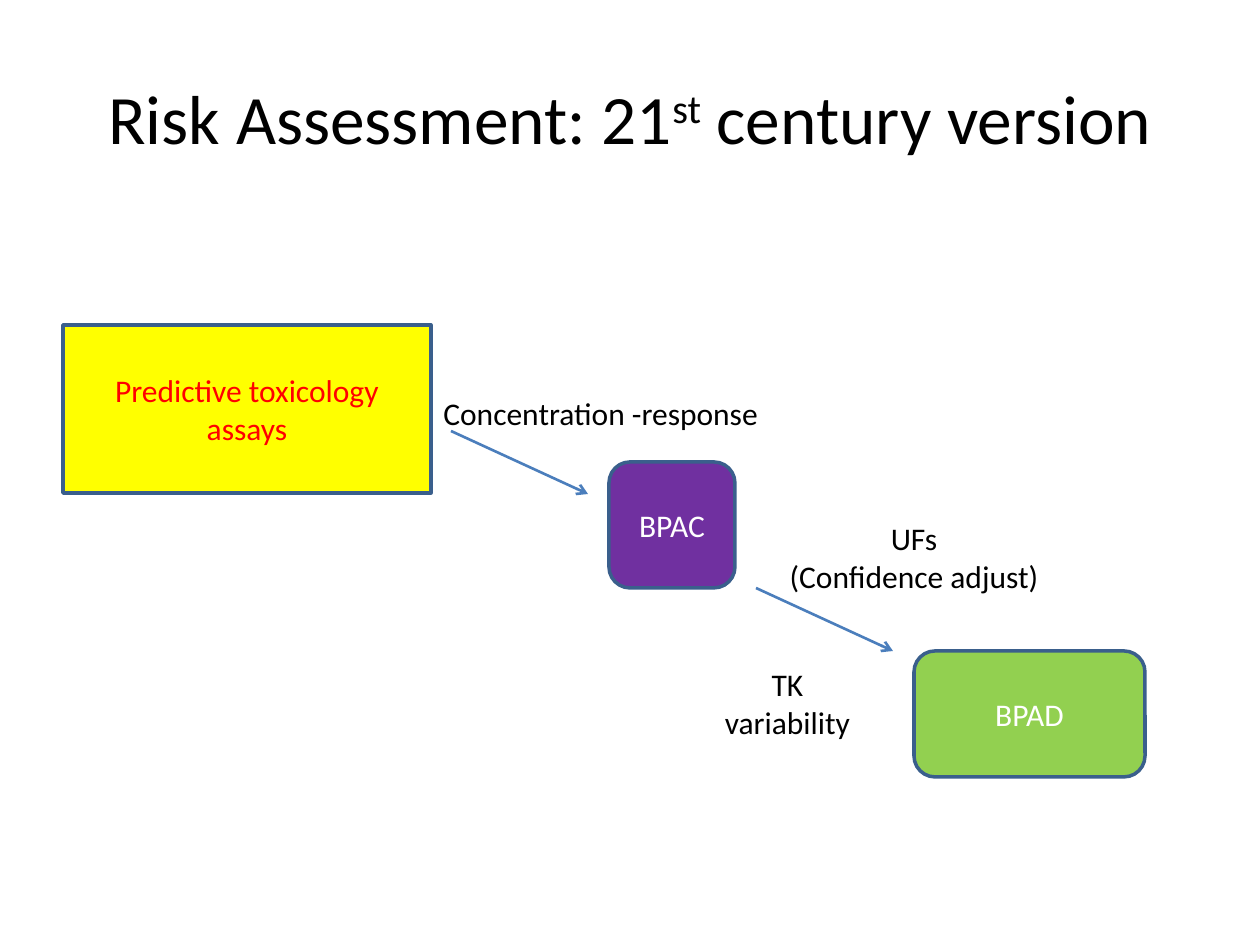
from lxml.etree import SubElement
from pptx import Presentation
from pptx.dml.color import RGBColor
from pptx.enum.shapes import MSO_CONNECTOR, MSO_SHAPE
from pptx.enum.text import MSO_ANCHOR, MSO_AUTO_SIZE, PP_ALIGN
from pptx.oxml.ns import qn
from pptx.util import Emu, Pt

PX = 914400 / 126
FONT = "Calibri"
COLORS = {
    "text": "000000",
    "light": "FFFFFF",
    "alert": "FF0000",
    "assays": "FFFF00",
    "bpac": "7030A0",
    "bpad": "92D050",
    "outline": "3A5F8C",
    "arrow": "4B7EBC",
}


def px(*lengths):
    return [Emu(round(length * PX)) for length in lengths]


def color(name):
    return RGBColor.from_string(COLORS[name])


def format_paragraph(paragraph, size, ink, align):
    paragraph.alignment = align
    paragraph.font.name = FONT
    paragraph.font.size = Pt(size)
    paragraph.font.color.rgb = color(ink)


def write_lines(frame, lines, ink, align=PP_ALIGN.CENTER):
    frame.text = "\n".join(lines)
    for paragraph in frame.paragraphs:
        format_paragraph(paragraph, 18, ink, align)


def add_title(slide, box):
    title = slide.shapes.title
    title.left, title.top, title.width, title.height = px(*box)
    frame = title.text_frame
    frame.vertical_anchor = MSO_ANCHOR.MIDDLE
    heading = frame.paragraphs[0]
    format_paragraph(heading, 39.6, "text", PP_ALIGN.CENTER)
    for words in ("Risk Assessment: 21", "st", " century version"):
        run = heading.add_run()
        run.text = words
        if words == "st":
            run._r.get_or_add_rPr().set("baseline", "30000")


def add_block(slide, box, lines, ink="text", fill=None,
              preset=MSO_SHAPE.ROUNDED_RECTANGLE):
    """Add a centred block; without a fill it is a bare label."""
    block = slide.shapes.add_shape(preset, *px(*box))
    block.shadow.inherit = False
    if fill:
        block.fill.solid()
        block.fill.fore_color.rgb = color(fill)
        block.line.color.rgb = color("outline")
        block.line.width = Pt(2)
    else:
        block.fill.background()
        block.line.fill.background()
    block.text_frame.word_wrap = True
    block.text_frame.vertical_anchor = MSO_ANCHOR.MIDDLE
    write_lines(block.text_frame, lines, ink)


def add_arrow(slide, start, end):
    arrow = slide.shapes.add_connector(MSO_CONNECTOR.STRAIGHT, *px(*start, *end))
    arrow.line.color.rgb = color("arrow")
    arrow.line.width = Pt(1.5)
    SubElement(arrow.line._get_or_add_ln(), qn("a:tailEnd"), type="arrow")
    SubElement(arrow._element.spPr, qn("a:effectLst"))


def add_response_label(slide, box):
    label = slide.shapes.add_textbox(*px(*box))
    label.text_frame.word_wrap = False
    label.text_frame.auto_size = MSO_AUTO_SIZE.SHAPE_TO_FIT_TEXT
    write_lines(label.text_frame, ["Concentration -response"], "text", PP_ALIGN.LEFT)


def add_assessment_flow(slide, box):
    """Draw the steps from assays to BPAD, descending to the right."""
    left, top, _, _ = box

    def at(x, y, *size):
        return (left + x, top + y, *size)

    add_block(slide, at(0, 0, 368, 168), ["Predictive toxicology assays"],
              "alert", "assays", MSO_SHAPE.RECTANGLE)
    add_block(slide, at(546, 137, 126, 126), ["BPAC"], "light", "bpac")
    add_block(slide, at(851, 326, 231, 126), ["BPAD"], "light", "bpad")
    for x, y in ((388, 106), (693, 263)):
        add_arrow(slide, at(x, y), at(x + 137, y + 63))
    add_response_label(slide, at(368, 63, 344, 50))
    add_block(slide, at(704, 169, 294, 126), ["UFs", "(Confidence adjust)"])
    add_block(slide, at(630, 315, 189, 126), ["TK", "variability"])


def main():
    presentation = Presentation()
    presentation.slide_width, presentation.slide_height = px(1260, 945)
    slide = presentation.slides.add_slide(presentation.slide_layouts[5])
    add_title(slide, (63, 38, 1134, 158))
    add_assessment_flow(slide, (63, 325, 1082, 452))
    presentation.save("out.pptx")


if __name__ == "__main__":
    main()
